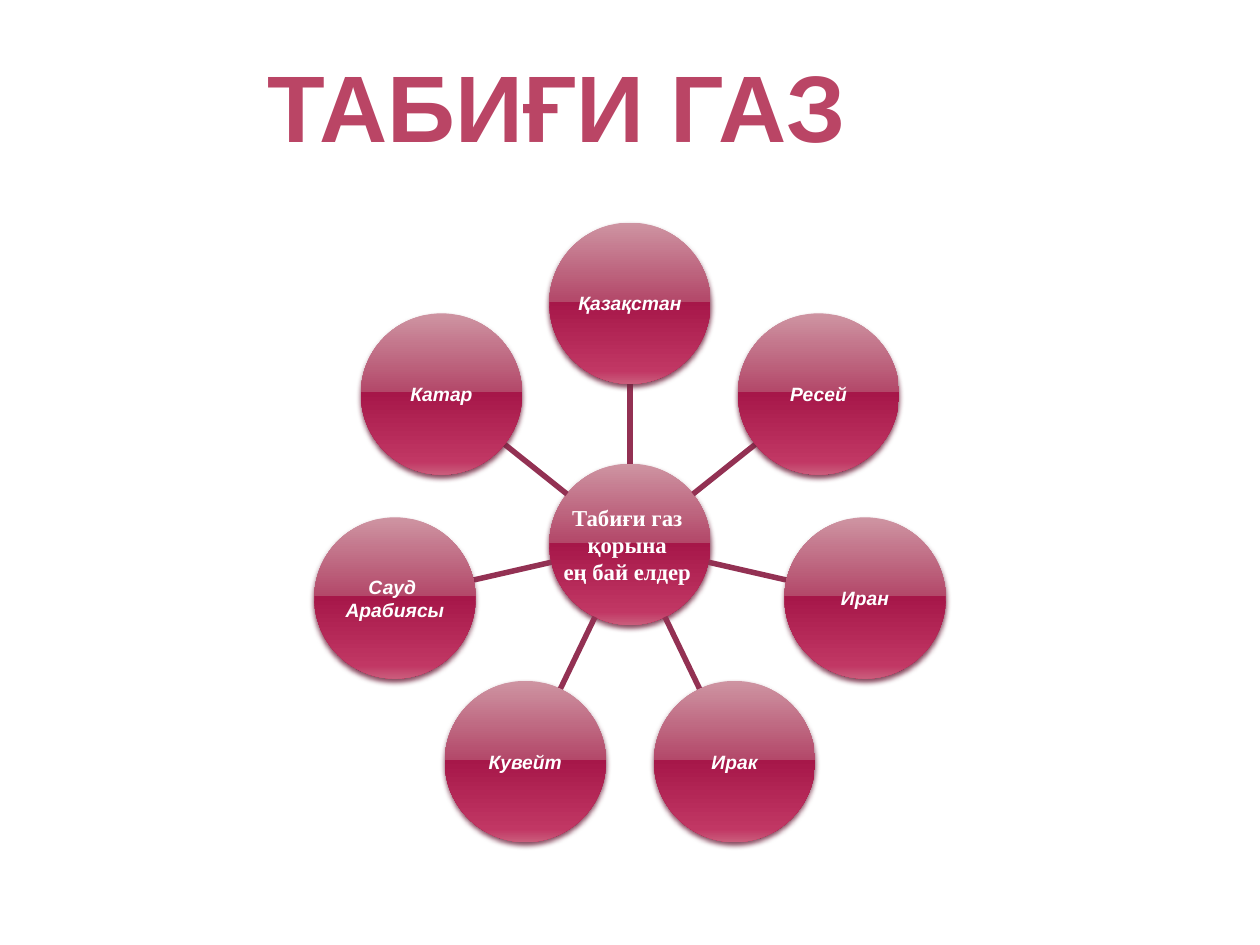
from math import cos, pi, sin
from lxml.etree import SubElement
from pptx import Presentation
from pptx.dml.color import RGBColor
from pptx.enum.shapes import MSO_CONNECTOR, MSO_SHAPE
from pptx.enum.text import MSO_ANCHOR, PP_ALIGN
from pptx.oxml import parse_xml
from pptx.oxml.ns import nsdecls, qn
from pptx.util import Inches, Pt

deck = Presentation()
deck.slide_width, deck.slide_height = Inches(10), Inches(7.5)
wide, high = deck.slide_width, deck.slide_height
slide = deck.slides.add_slide(deck.slide_layouts[5])

# Wheel: the spokes fill the gap between hub and ring
mid_x, mid_y = wide * 0.5, high * 0.576
size = wide * 0.128
ring = size * 1.495
lands = ["Қазақстан", "Ресей", "Иран", "Ирак", "Кувейт", "Сауд \nАрабиясы", "Катар"]
stops = [(0, "CE94A2"), (49, "B34869"), (49, "A61749"), (92, "C13764"), (100, "CA5D7C")]
hub_font = {"size": Pt(13), "name": "Times New Roman", "bold": True}
land_font = {"size": Pt(11), "name": "Arial", "bold": True, "italic": True}
title_font = {"size": Pt(54), "name": "Arial", "bold": True}

marks = "".join(f'<a:gs pos="{at * 1000}"><a:srgbClr val="{hue}"/></a:gs>' for at, hue in stops)
grad = (f'<a:gradFill {nsdecls("a")} rotWithShape="1"><a:gsLst>{marks}</a:gsLst>'
        '<a:lin ang="5400000" scaled="0"/></a:gradFill>')
shade = (f'<a:effectLst {nsdecls("a")}><a:outerShdw blurRad="{Pt(3.1)}" dist="{Pt(2)}" '
         'dir="5400000" rotWithShape="0"><a:srgbClr val="722640"><a:alpha val="83000"/>'
         '</a:srgbClr></a:outerShdw></a:effectLst>')


def write(frame, text, look, hue):
    frame.text = text
    for para in frame.paragraphs:
        para.alignment = PP_ALIGN.CENTER
        for run in para.runs:
            for key, value in look.items():
                setattr(run.font, key, value)
            run.font.color.rgb = RGBColor.from_string(hue)


def disc(x, y, text, look):
    ball = slide.shapes.add_shape(
        MSO_SHAPE.OVAL, int(x - size / 2), int(y - size / 2), int(size), int(size))
    ball.line.fill.background()
    props = ball.element.spPr
    props.find(qn("a:prstGeom")).addnext(parse_xml(grad))
    props.append(parse_xml(shade))
    frame = ball.text_frame
    frame.word_wrap = False
    frame.vertical_anchor = MSO_ANCHOR.MIDDLE
    for side in ("left", "top", "right", "bottom"):
        setattr(frame, f"margin_{side}", Inches(0.01))
    write(frame, text, look, "FFFFFF")


# Hub
disc(mid_x, mid_y, "Табиғи газ \nқорына \nең бай елдер ", hub_font)

# Spokes and countries, clockwise from the top
for step, land in enumerate(lands):
    turn = 2 * pi * step / len(lands)
    dx, dy = sin(turn), -cos(turn)
    near, far = size / 2, ring - size / 2
    spoke = slide.shapes.add_connector(
        MSO_CONNECTOR.STRAIGHT,
        int(mid_x + near * dx), int(mid_y + near * dy),
        int(mid_x + far * dx), int(mid_y + far * dy))
    spoke.line.color.rgb = RGBColor.from_string("933153")
    spoke.line.width = Pt(3.15)
    SubElement(spoke.element.spPr, qn("a:effectLst"))
    disc(mid_x + ring * dx, mid_y + ring * dy, land, land_font)

# Title
title = slide.shapes.title
title.left, title.top = int(wide * 0.092), int(high * 0.044)
title.width, title.height = int(wide * 0.7), int(high * 0.135)
title.text_frame.vertical_anchor = MSO_ANCHOR.TOP
write(title.text_frame, "ТАБИҒИ ГАЗ", title_font, "BA4565")

deck.save("out.pptx")
